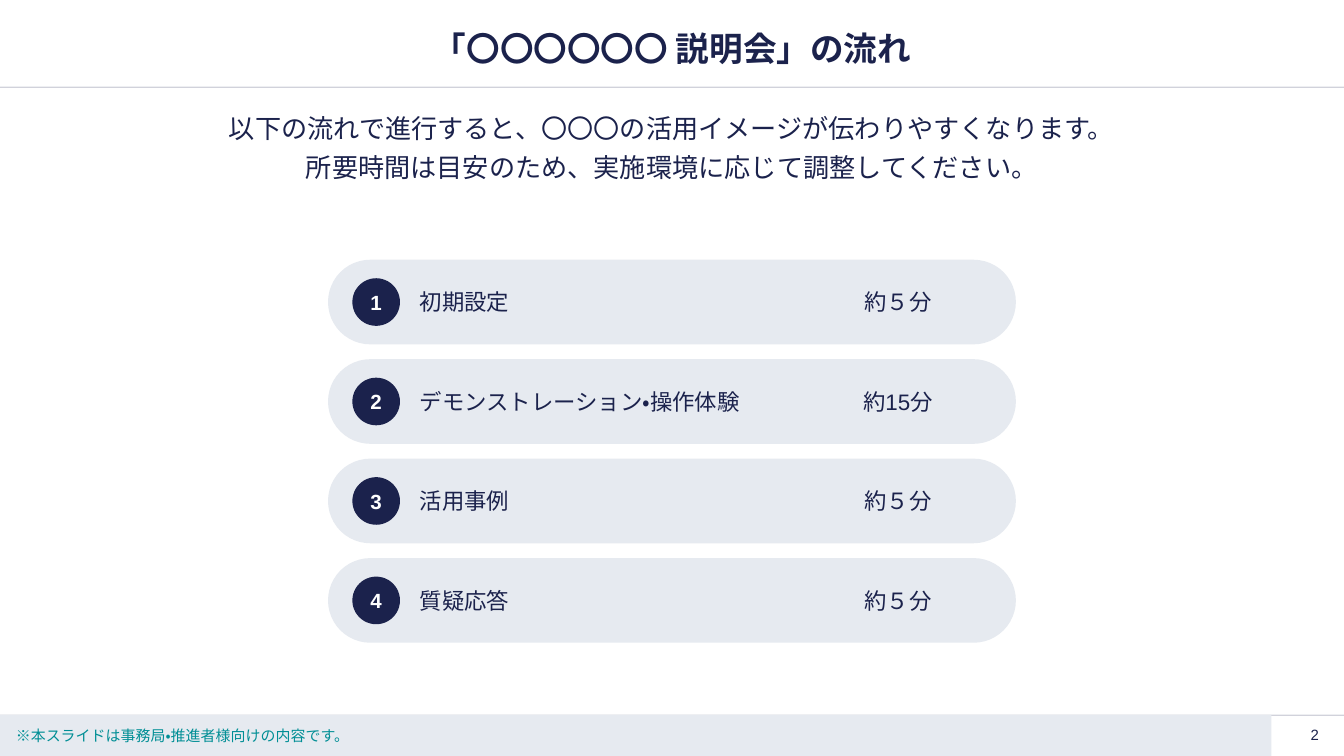
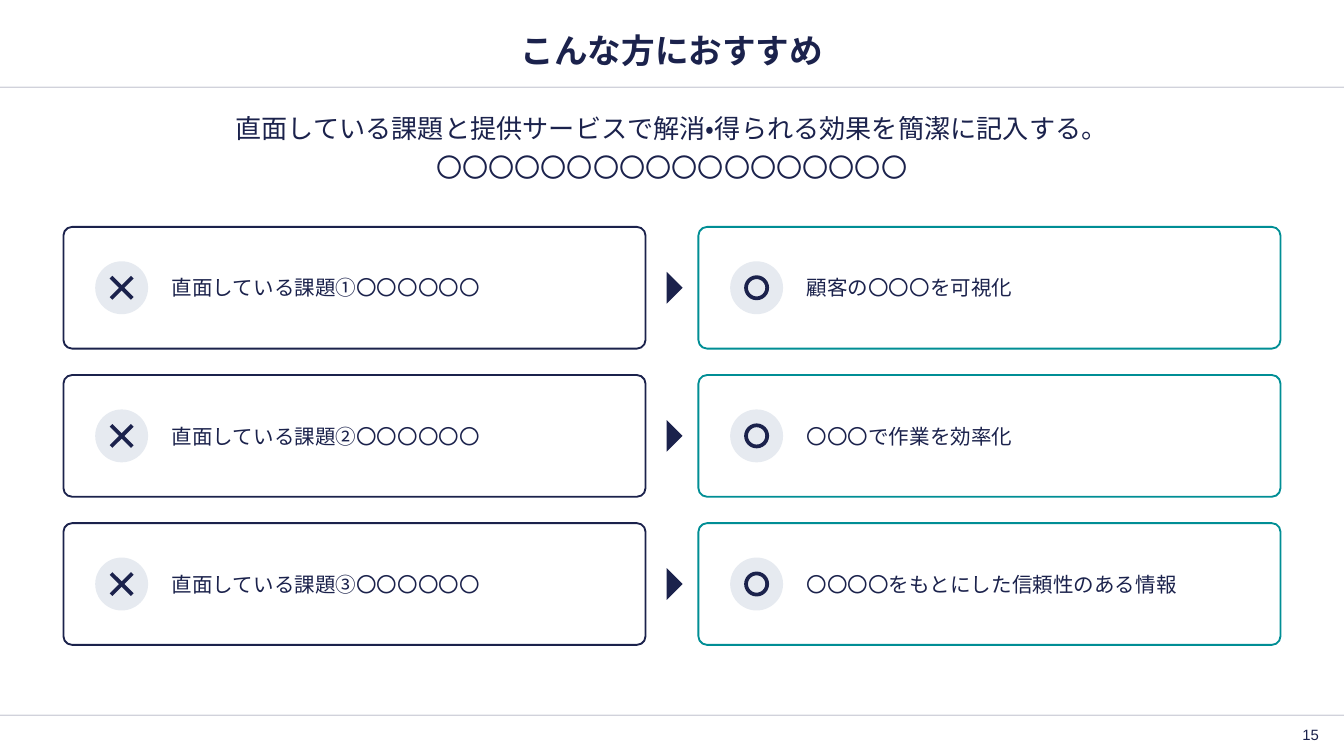
from dataclasses import dataclass
from lxml.etree import SubElement
from pptx import Presentation
from pptx.dml.color import RGBColor
from pptx.enum.lang import MSO_LANGUAGE_ID as Language
from pptx.enum.shapes import MSO_CONNECTOR as Connector, MSO_SHAPE as Preset
from pptx.enum.text import MSO_ANCHOR as Anchor, MSO_AUTO_SIZE as AutoSize, PP_ALIGN as Align
from pptx.oxml.ns import qn
from pptx.util import Cm, Pt


@dataclass(frozen=True)
class Theme:
    font: str = "Arial"
    navy: str = "1B224C"
    teal: str = "008E95"
    pale: str = "E6EAF0"
    white: str = "FFFFFF"
    title: int = 18
    lead: int = 14
    step: int = 12
    label: int = 11
    small: int = 8
    inset: float = 0.1


SLIDE_WIDTH, SLIDE_HEIGHT = 25.4, 14.29
MARGIN, CONTENT_WIDTH = 1.2, 23
FOOTER_TOP = 13.52
NUMBER_LEFT = 24.03


class Deck:
    def __init__(self, theme):
        self.theme = theme
        self.presentation = Presentation()
        self.presentation.slide_width = Cm(SLIDE_WIDTH)
        self.presentation.slide_height = Cm(SLIDE_HEIGHT)
        self.slide = None

    def start(self, title, lead, number, title_top):
        layout = self.presentation.slide_layouts.get_by_name("Title Only")
        self.slide = self.presentation.slides.add_slide(layout)
        for y in (1.65, FOOTER_TOP):
            self.line((0, y), (SLIDE_WIDTH, y), 0.75, opacity=20)
        heading = self.slide.shapes.title
        heading.left, heading.top = Cm(MARGIN), Cm(title_top)
        heading.width, heading.height = Cm(CONTENT_WIDTH), Cm(1)
        self.fill_text(heading, title, self.theme.title, align=Align.CENTER, bold=True)
        self.text((MARGIN, 2.03, CONTENT_WIDTH, 1.5), lead, self.theme.lead,
                  align=Align.CENTER, anchor=Anchor.TOP, after=4)
        self.text((NUMBER_LEFT, 13.64, 1, 0.5), number, self.theme.small, align=Align.RIGHT)

    def fill_text(self, holder, text, size, color=None, align=Align.LEFT, anchor=Anchor.MIDDLE,
                  bold=False, inset=None, indent=None, after=0, wrap=True):
        inset = self.theme.inset if inset is None else inset
        frame = holder.text_frame
        frame.text = text
        frame.word_wrap = wrap
        frame.auto_size = AutoSize.NONE
        frame.vertical_anchor = anchor
        frame.margin_left = Cm(inset if indent is None else indent)
        frame.margin_top = frame.margin_right = frame.margin_bottom = Cm(inset)
        for paragraph in frame.paragraphs:
            paragraph.alignment = align
            paragraph.space_before, paragraph.space_after = Pt(0), Pt(after)
            for run in paragraph.runs:
                run.font.name = self.theme.font
                run.font.size = Pt(size)
                run.font.bold = bold
                run.font.language_id = Language.JAPANESE
                run.font.color.rgb = RGBColor.from_string(color or self.theme.navy)

    def text(self, box, text, size, **style):
        self.fill_text(self.slide.shapes.add_textbox(*map(Cm, box)), text, size, **style)

    def shape(self, preset, box, fill=None, outline=None, weight=1, corner=None, group=None):
        shape = (group or self.slide).shapes.add_shape(preset, *map(Cm, box))
        shape.shadow.inherit = False
        if fill:
            shape.fill.solid()
            shape.fill.fore_color.rgb = RGBColor.from_string(fill)
        else:
            shape.fill.background()
        if outline:
            shape.line.color.rgb = RGBColor.from_string(outline)
            shape.line.width = Pt(weight)
        else:
            shape.line.fill.background()
        if corner is not None:
            shape.adjustments[0] = corner
        return shape

    def line(self, start, end, weight, opacity=100, group=None):
        line = (group or self.slide).shapes.add_connector(
            Connector.STRAIGHT, *map(Cm, start + end))
        line.line.color.rgb = RGBColor.from_string(self.theme.navy)
        line.line.width = Pt(weight)
        properties = line.element.spPr
        if opacity < 100:
            color = properties.find(".//" + qn("a:srgbClr"))
            SubElement(color, qn("a:alpha"), val=str(opacity * 1000))
        SubElement(properties, qn("a:effectLst"))

    def icon(self, center_x, center_y, solved):
        group = self.slide.shapes.add_group_shape()
        disc, mark = 0.5, 0.2
        self.shape(Preset.OVAL, (center_x - disc, center_y - disc, 2 * disc, 2 * disc),
                   self.theme.pale, group=group)
        left, right = center_x - mark, center_x + mark
        top, bottom = center_y - mark, center_y + mark
        if solved:
            self.shape(Preset.OVAL, (left, top, 2 * mark, 2 * mark),
                       outline=self.theme.navy, weight=2, group=group)
        else:
            self.line((left, top), (right, bottom), 2, group=group)
            self.line((right, top), (left, bottom), 2, group=group)

    def step(self, number, top, name, duration):
        theme, height, badge = self.theme, 1.6, 0.9
        pill = self.shape(Preset.ROUNDED_RECTANGLE, (6.2, top, 13, height), theme.pale, corner=0.5)
        self.fill_text(pill, name, theme.step, indent=1.5)
        disc = self.shape(Preset.OVAL, (6.66, top + (height - badge) / 2, badge, badge), theme.navy)
        self.fill_text(disc, str(number), theme.label, theme.white, Align.CENTER,
                       bold=True, inset=0)
        self.text((15.47, top, 3, height), duration, theme.step, align=Align.CENTER)

    def card(self, left, top, height, text, outline, solved):
        card = self.shape(Preset.ROUNDED_RECTANGLE, (left, top, 11, height),
                          self.theme.white, outline, corner=0.07)
        self.fill_text(card, text, self.theme.label, inset=0.2, indent=2)
        self.icon(left + 1.1, top + height / 2, solved)

    def arrow(self, center_x, center_y):
        width, height = 0.6, 0.3
        arrow = self.shape(Preset.ISOSCELES_TRIANGLE,
                           (center_x - width / 2, center_y - height / 2, width, height),
                           self.theme.navy)
        arrow.rotation = 90

    def audience_note(self, text):
        band = self.shape(Preset.RECTANGLE,
                          (0, FOOTER_TOP, NUMBER_LEFT, SLIDE_HEIGHT - FOOTER_TOP), self.theme.pale)
        self.fill_text(band, text, self.theme.small, self.theme.teal, indent=0.3, wrap=False)


def build_agenda(deck):
    deck.start("「〇〇〇〇〇〇 説明会」の流れ",
               "以下の流れで進行すると、〇〇〇の活用イメージが伝わりやすくなります。\n"
               "所要時間は目安のため、実施環境に応じて調整してください。", "2", 0.41)
    steps = [("初期設定", "約５分"), ("デモンストレーション・操作体験", "約15分"),
             ("活用事例", "約５分"), ("質疑応答", "約５分")]
    for index, (name, duration) in enumerate(steps):
        deck.step(index + 1, 4.91 + index * 1.88, name, duration)
    deck.audience_note("※本スライドは事務局・推進者様向けの内容です。")


def build_recommendation(deck):
    deck.start("こんな方におすすめ",
               "直面している課題と提供サービスで解消・得られる効果を簡潔に記入する。\n"
               "〇〇〇〇〇〇〇〇〇〇〇〇〇〇〇〇〇〇", "15", 0.44)
    pairs = [("直面している課題①〇〇〇〇〇〇", "顧客の〇〇〇を可視化"),
             ("直面している課題②〇〇〇〇〇〇", "〇〇〇で作業を効率化"),
             ("直面している課題③〇〇〇〇〇〇", "〇〇〇〇をもとにした信頼性のある情報")]
    height = 2.3
    for index, (problem, benefit) in enumerate(pairs):
        top = 4.29 + index * 2.8
        deck.card(MARGIN, top, height, problem, deck.theme.navy, solved=False)
        deck.card(13.2, top, height, benefit, deck.theme.teal, solved=True)
        deck.arrow(12.75, top + height / 2)


def main():
    deck = Deck(Theme())
    build_agenda(deck)
    build_recommendation(deck)
    deck.presentation.save("out.pptx")


if __name__ == "__main__":
    main()
